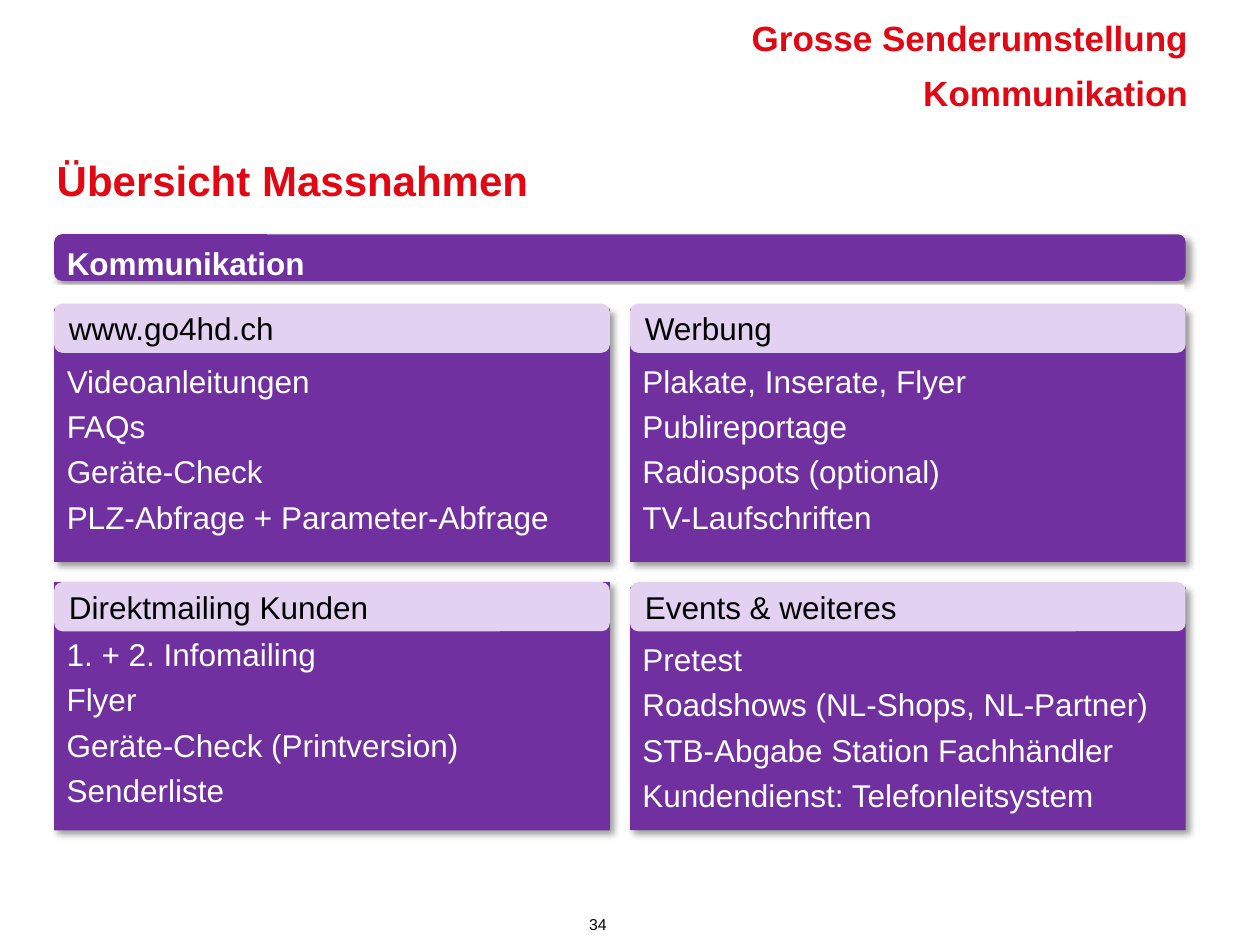
from dataclasses import dataclass

from lxml.etree import SubElement
from pptx import Presentation
from pptx.dml.color import RGBColor
from pptx.enum.shapes import MSO_SHAPE
from pptx.enum.text import MSO_ANCHOR, MSO_AUTO_SIZE, PP_ALIGN
from pptx.oxml.ns import qn
from pptx.util import Inches, Pt


@dataclass(frozen=True)
class Theme:
    font: str = "Arial"
    red: str = "E30613"
    purple: str = "7030A0"
    lilac: str = "E3D1F1"
    white: str = "FFFFFF"
    black: str = "000000"
    title: int = 24
    header: int = 20
    body: int = 18
    small: int = 9


class SlideBuilder:
    def __init__(self, slide, theme):
        self.slide = slide
        self.theme = theme

    def placeholder(self, idx, x, y, w, h):
        """Place a layout placeholder and bring it to the front."""
        sp = next(s for s in self.slide.placeholders
                  if s.placeholder_format.idx == idx)
        box = dict(left=x, top=y, width=w, height=h)
        for name, value in box.items():
            setattr(sp, name, Inches(value))
        self.slide.shapes._spTree.append(sp._element)
        return sp

    def shape(self, kind, x, y, w, h):
        return self.slide.shapes.add_shape(
            kind, Inches(x), Inches(y), Inches(w), Inches(h))

    def paint(self, sp, color, shadow=False):
        sp.fill.solid()
        sp.fill.fore_color.rgb = RGBColor.from_string(color)
        sp.line.fill.background()
        if hasattr(sp, "shadow"):
            sp.shadow.inherit = False
        if shadow:
            effects = sp._element.spPr.find(qn("a:effectLst"))
            outer = SubElement(effects, qn("a:outerShdw"),
                               blurRad=str(Pt(4)), dist=str(Pt(3)),
                               dir=str(45 * 60000), algn="tl", rotWithShape="0")
            clr = SubElement(outer, qn("a:srgbClr"), val=self.theme.black)
            SubElement(clr, qn("a:alpha"), val="40000")

    def text(self, sp, lines, size, color, bold=False, align=PP_ALIGN.LEFT,
             anchor=MSO_ANCHOR.TOP, top=0.05):
        tf = sp.text_frame
        frame = dict(word_wrap=True, auto_size=MSO_AUTO_SIZE.NONE,
                     vertical_anchor=anchor, margin_top=Inches(top),
                     margin_bottom=Inches(0.05), margin_left=Inches(0.1),
                     margin_right=Inches(0.1))
        for name, value in frame.items():
            setattr(tf, name, value)
        font = dict(name=self.theme.font, size=Pt(size), bold=bold)
        for i, line in enumerate(lines):
            p = tf.paragraphs[0] if i == 0 else tf.add_paragraph()
            pPr = p._p.get_or_add_pPr()
            pPr.set("marL", "0")
            pPr.set("indent", "0")
            SubElement(pPr, qn("a:buNone"))
            p.alignment = align
            p.space_before = Pt(size * 0.24 if i else 0)
            r = p.add_run()
            # The template's comparison title style may carry capitals.
            r.text = line
            for name, value in font.items():
                setattr(r.font, name, value)
            r.font.color.rgb = RGBColor.from_string(color)

    def heading(self, idx, box, line, size, color, align=PP_ALIGN.LEFT):
        sp = self.placeholder(idx, *box)
        self.text(sp, [line], size, color, True, align, top=0.08)

    def panel(self, x, y, w, bottom, drop, label, items, idx=None):
        """Purple list box under a lilac label; drop lowers the box top."""
        t = self.theme
        box = (x, y + drop, w, bottom - y - drop)
        if idx is None:
            sp = self.shape(MSO_SHAPE.RECTANGLE, *box)
        else:
            sp = self.placeholder(idx, *box)
        self.paint(sp, t.purple, shadow=True)
        self.text(sp, items, t.body, t.white, top=0.42)
        chip = self.shape(MSO_SHAPE.ROUNDED_RECTANGLE, x, y, w, 0.39)
        self.paint(chip, t.lilac)
        self.text(chip, [label], t.body, t.black, anchor=MSO_ANCHOR.MIDDLE)

    def page_number(self, number):
        sp = self.slide.shapes.add_textbox(
            Inches(3.58), Inches(7.21), Inches(2.33), Inches(0.29))
        self.text(sp, [number], self.theme.small, self.theme.black,
                  align=PP_ALIGN.CENTER)


LEFT, RIGHT, PANEL_W = 0.43, 5.0, 4.41
ROW_1, ROW_2 = (2.41, 4.46), (4.62, 6.59)
# x, (top, bottom), drop, label, items, placeholder
PANELS = [
    (LEFT, ROW_1, 0.04, "www.go4hd.ch",
     ["Videoanleitungen", "FAQs", "Geräte-Check",
      "PLZ-Abfrage + Parameter-Abfrage"], 4),
    (LEFT, ROW_2, 0, "Direktmailing Kunden",
     ["1. + 2. Infomailing", "Flyer", "Geräte-Check (Printversion)",
      "Senderliste"], None),
    (RIGHT, ROW_1, 0.04, "Werbung",
     ["Plakate, Inserate, Flyer", "Publireportage", "Radiospots (optional)",
      "TV-Laufschriften"], None),
    (RIGHT, ROW_2, 0.04, "Events & weiteres",
     ["Pretest", "Roadshows (NL-Shops, NL-Partner)",
      "STB-Abgabe Station Fachhändler",
      "Kundendienst: Telefonleitsystem"], None),
]


def main():
    prs = Presentation()
    prs.slide_width, prs.slide_height = Inches(10), Inches(7.5)
    t = Theme()
    s = SlideBuilder(prs.slides.add_slide(prs.slide_layouts[4]), t)

    bar = s.shape(MSO_SHAPE.ROUNDED_RECTANGLE, LEFT, 1.86, 8.98, 0.37)
    s.paint(bar, t.purple, shadow=True)
    s.paint(s.shape(MSO_SHAPE.RECTANGLE, LEFT, 2.26, 8.97, 4.48), t.white)

    s.heading(1, (4.29, 0.05, 5.24, 0.44), "Grosse Senderumstellung",
              t.header, t.red, PP_ALIGN.RIGHT)
    s.heading(3, (4.29, 0.49, 5.24, 0.44), "Kommunikation",
              t.header, t.red, PP_ALIGN.RIGHT)
    s.heading(0, (0.35, 1.15, 9.06, 0.55), "Übersicht Massnahmen",
              t.title, t.red)
    s.heading(2, (LEFT, 1.86, 8.9, 0.37), "Kommunikation", t.body, t.white)
    s.page_number("34")

    for x, (top, bottom), drop, label, items, idx in PANELS:
        s.panel(x, top, PANEL_W, bottom, drop, label, items, idx)

    prs.save("out.pptx")


if __name__ == "__main__":
    main()
